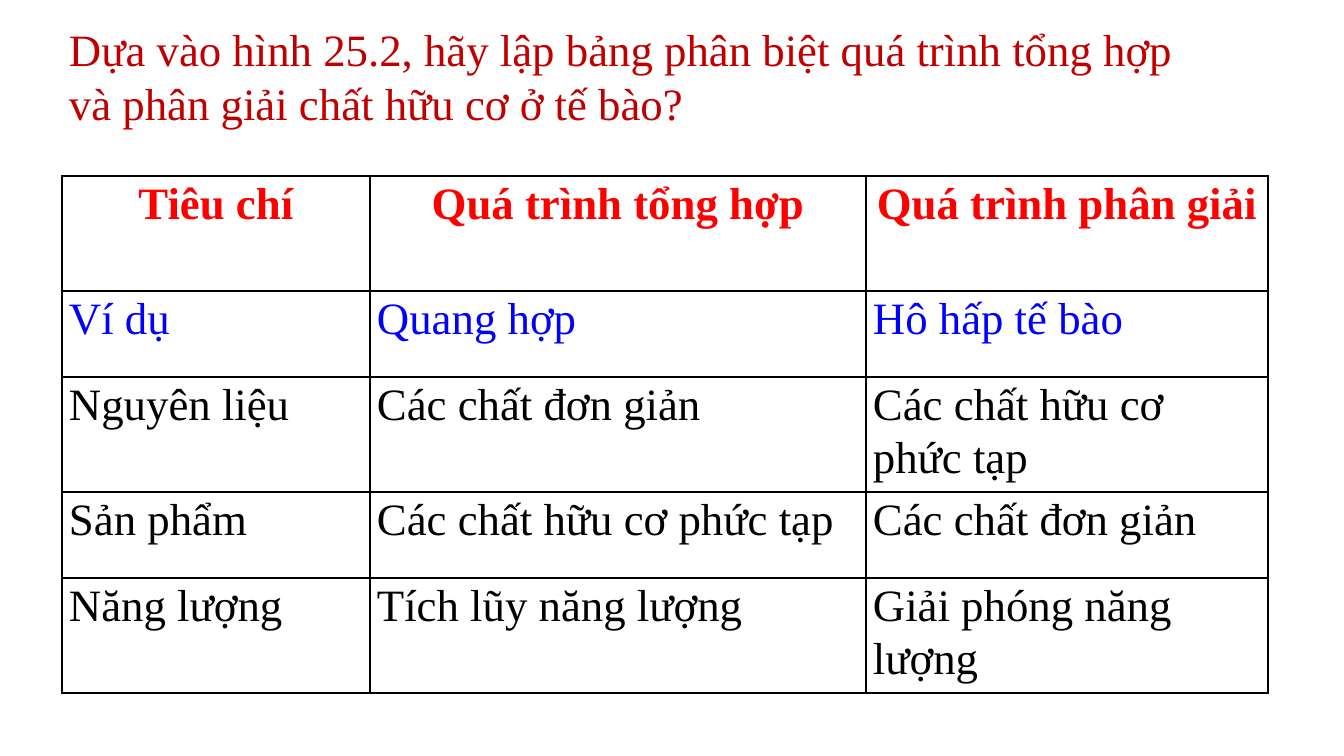
import pptx
import pptx.util
import pptx.dml.color
import pptx.enum.text
import pptx.enum.shapes
import lxml.etree

FONT = "Times New Roman"
PX = 914400 / 100.8


def px(n):
    return pptx.util.Emu(round(n * PX))


def color(value):
    return pptx.dml.color.RGBColor.from_string(value)


prs = pptx.Presentation()
prs.slide_width = px(1344)
prs.slide_height = px(756)
s = prs.slides.add_slide(prs.slide_layouts[6])

question = s.shapes.add_textbox(px(59), px(17), px(1151), px(119))
question.fill.solid()
question.fill.fore_color.rgb = color("FFFFFF")
tf = question.text_frame
tf.word_wrap = True
p = tf.paragraphs[0]
p.text = "Dựa vào hình 25.2, hãy lập bảng phân biệt quá trình tổng hợp và phân giải chất hữu cơ ở tế bào?"
p.font.name = FONT
p.font.size = pptx.util.Pt(32)
p.font.color.rgb = color("C00000")

rows = [
    ("FF0000", 115, ["Tiêu chí", "Quá trình tổng hợp", "Quá trình phân giải"]),
    ("0000FF", 86, ["Ví dụ", "Quang hợp", "Hô hấp tế bào"]),
    ("000000", 115, ["Nguyên liệu", "Các chất đơn giản", "Các chất hữu cơ phức tạp"]),
    ("000000", 86, ["Sản phẩm", "Các chất hữu cơ phức tạp", "Các chất đơn giản"]),
    ("000000", 115, ["Năng lượng", "Tích lũy năng lượng", "Giải phóng năng lượng"]),
]
widths = [308, 496, 402]
heights = [height for _, height, _ in rows]

table = s.shapes.add_table(
    len(rows), len(widths), px(62), px(176), px(sum(widths)), px(sum(heights))
).table
for column, width in zip(table.columns, widths):
    column.width = px(width)

for i, (text_color, height, texts) in enumerate(rows):
    table.rows[i].height = px(height)
    for j, text in enumerate(texts):
        cell = table.cell(i, j)
        cell.margin_left = cell.margin_right = px(7)
        cell.margin_top = cell.margin_bottom = 0
        p = cell.text_frame.paragraphs[0]
        p.text = text
        p.line_spacing = 1.07
        p.font.name = FONT
        p.font.size = pptx.util.Pt(32)
        p.font.bold = i == 0
        p.font.color.rgb = color(text_color)
        if i == 0:
            p.alignment = pptx.enum.text.PP_ALIGN.CENTER
        tcPr = cell._tc.get_or_add_tcPr()
        for side in ("lnL", "lnR", "lnT", "lnB"):
            ln = lxml.etree.SubElement(tcPr, pptx.oxml.ns.qn("a:" + side), w="12700")
            fill = lxml.etree.SubElement(ln, pptx.oxml.ns.qn("a:solidFill"))
            lxml.etree.SubElement(fill, pptx.oxml.ns.qn("a:srgbClr"), val="000000")
        cell.fill.background()

prs.save("out.pptx")
